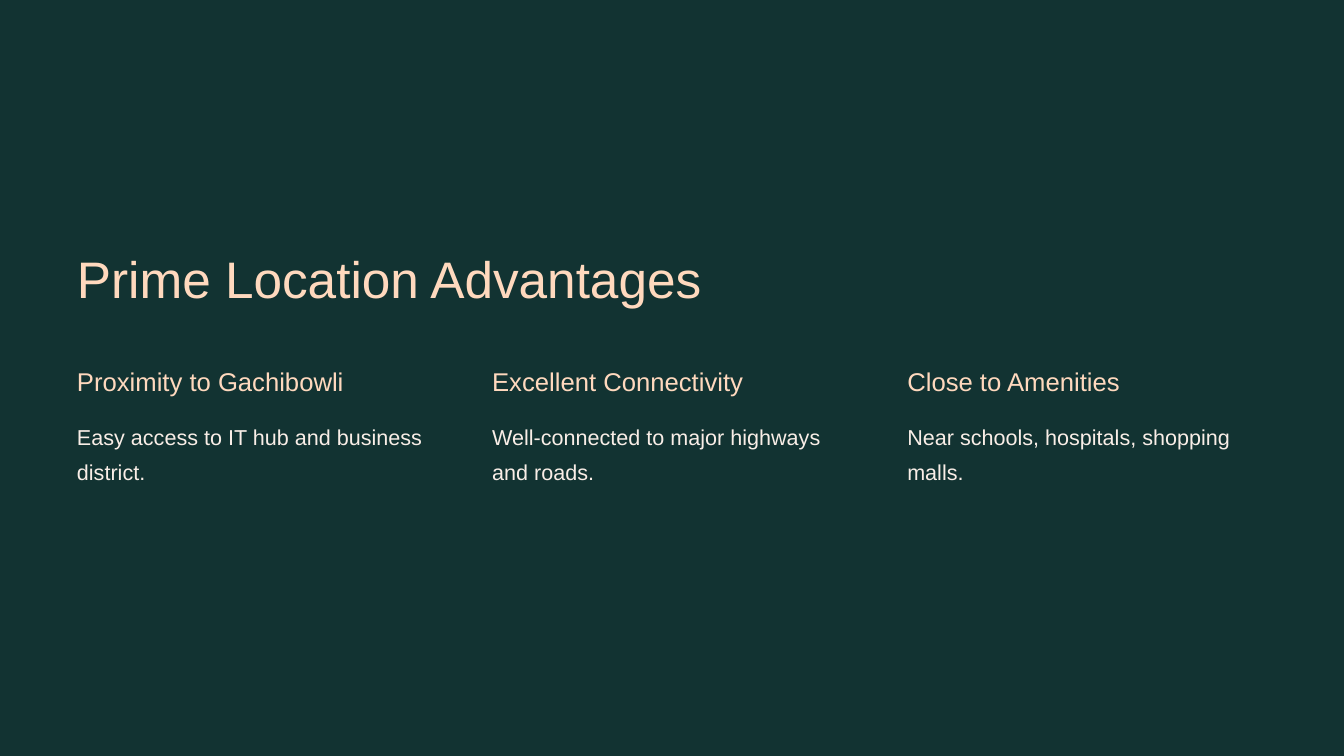
"""Build the slide on prime location advantages."""
from dataclasses import dataclass

from pptx import Presentation
from pptx.dml.color import RGBColor as Color
from pptx.enum.shapes import MSO_SHAPE as Shape
from pptx.util import Pt

TITLE = "Prime Location Advantages"
ADVANTAGES = [
    ("Proximity to Gachibowli", "Easy access to IT hub and business district."),
    ("Excellent Connectivity", "Well-connected to major highways and roads."),
    ("Close to Amenities", "Near schools, hospitals, shopping malls."),
]


@dataclass(frozen=True)
class TextStyle:
    size: float
    leading: float
    color: str


class Theme:
    font = "Arial"
    backdrop = "123332"
    title = TextStyle(55, 68.8, "FFD9BE")
    heading = TextStyle(27.5, 34.4, "FFD9BE")
    body = TextStyle(23.1, 37.5, "F9EEE7")


PAGE_WIDTH, PAGE_HEIGHT = 1440, 810
MARGIN = 82.5
COLUMN_WIDTH, COLUMN_PITCH = 386.6, 444.8
TITLE_TOP, TITLE_WIDTH, TITLE_HEIGHT = 262, 675.4, 71.3
HEADING_TOP, HEADING_HEIGHT = 390.2, 36
BODY_TOP, BODY_HEIGHT = 444.2, 81.4


def add_backdrop(page):
    backdrop = page.shapes.add_shape(Shape.RECTANGLE, 0, 0, Pt(PAGE_WIDTH), Pt(PAGE_HEIGHT))
    backdrop.shadow.inherit = False
    backdrop.fill.solid()
    backdrop.fill.fore_color.rgb = Color.from_string(Theme.backdrop)
    backdrop.line.fill.background()


def add_text(page, text, style, left, top, width, height):
    box = page.shapes.add_textbox(Pt(left), Pt(top), Pt(width), Pt(height))
    frame = box.text_frame
    frame.word_wrap = True
    frame.margin_left = frame.margin_right = Pt(0)
    frame.margin_top = frame.margin_bottom = Pt(0)
    para = frame.paragraphs[0]
    para.line_spacing = Pt(style.leading)
    span = para.add_run()
    span.text = text
    span.font.name = Theme.font
    span.font.size = Pt(style.size)
    span.font.color.rgb = Color.from_string(style.color)


def main():
    deck = Presentation()
    deck.slide_width, deck.slide_height = Pt(PAGE_WIDTH), Pt(PAGE_HEIGHT)
    page = deck.slides.add_slide(deck.slide_layouts[6])

    add_backdrop(page)
    add_text(page, TITLE, Theme.title, MARGIN, TITLE_TOP, TITLE_WIDTH, TITLE_HEIGHT)
    for column, (heading, body) in enumerate(ADVANTAGES):
        left = MARGIN + column * COLUMN_PITCH
        add_text(page, heading, Theme.heading, left, HEADING_TOP, COLUMN_WIDTH, HEADING_HEIGHT)
        add_text(page, body, Theme.body, left, BODY_TOP, COLUMN_WIDTH, BODY_HEIGHT)

    deck.save("out.pptx")


if __name__ == "__main__":
    main()
